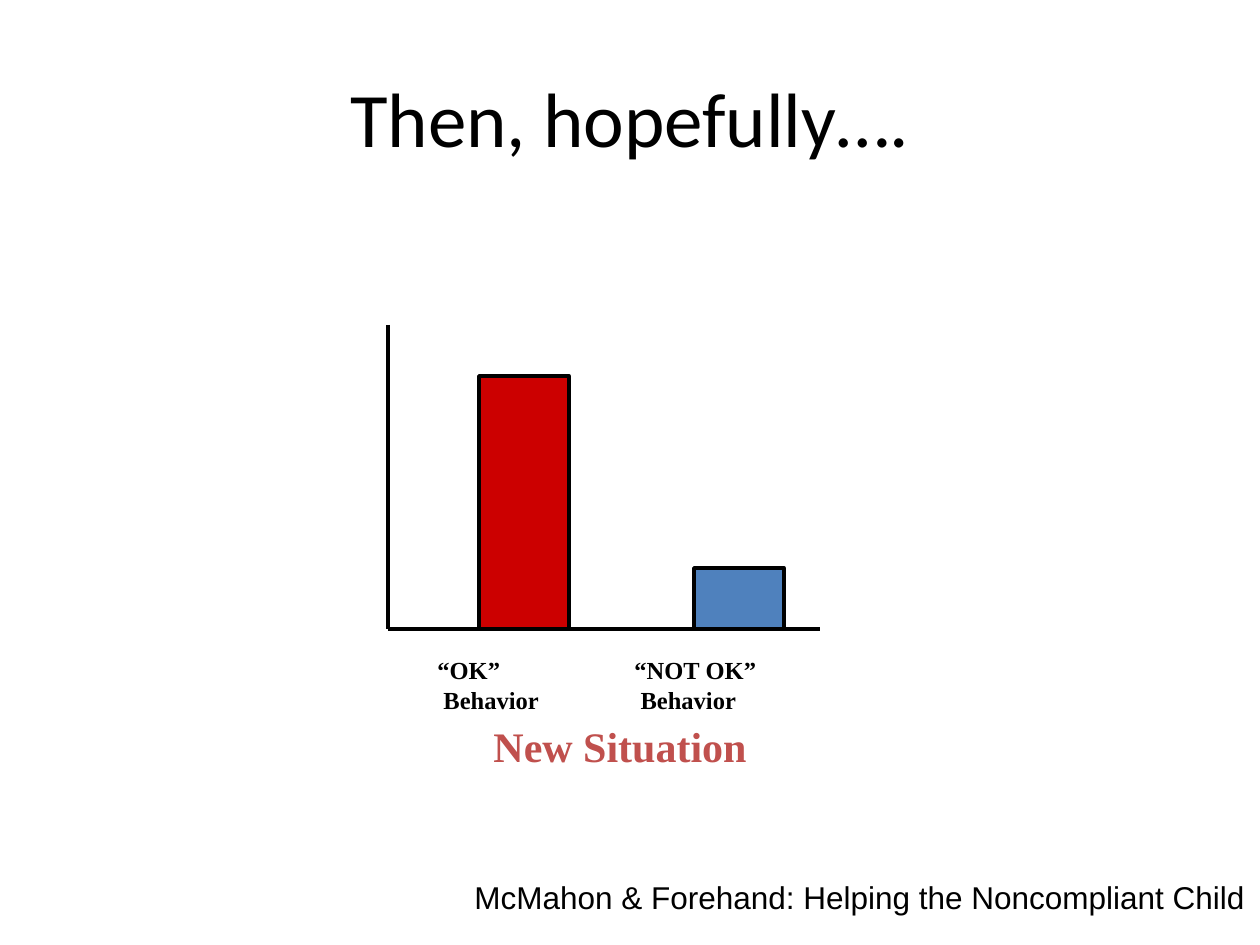
from lxml import etree
from pptx import Presentation
from pptx.dml.color import RGBColor
from pptx.enum.shapes import MSO_CONNECTOR as CONNECTOR, MSO_SHAPE as SHAPE
from pptx.enum.text import MSO_ANCHOR as ANCHOR, PP_ALIGN as ALIGN
from pptx.oxml.ns import qn
from pptx.util import Emu, Pt

PX_PER_INCH = 126
COLORS = {
    "text": "000000",
    "ok": "CC0000",
    "not_ok": "4F81BD",
    "situation": "C0504D",
}
SERIF = "Times New Roman"


def px(length):
    return Emu(round(length * 914400 / PX_PER_INCH))


def color(name):
    return RGBColor.from_string(COLORS[name])


def style(paragraph, font_name, size, color_name="text", bold=False, align=ALIGN.LEFT):
    paragraph.alignment = align
    font = paragraph.font
    font.name, font.size, font.bold = font_name, Pt(size), bold
    font.color.rgb = color(color_name)


def add_text(shapes, box, lines, *font, **options):
    frame = shapes.add_textbox(*map(px, box)).text_frame
    frame.word_wrap = True
    frame.text = "\n".join(lines)
    for paragraph in frame.paragraphs:
        style(paragraph, *font, **options)


def outline(shape):
    shape.line.color.rgb = color("text")
    shape.line.width = Pt(2)


def add_axis(shapes, *ends):
    axis = shapes.add_connector(CONNECTOR.STRAIGHT, *map(px, ends))
    outline(axis)
    etree.SubElement(axis._element.spPr, qn("a:effectLst"))


def add_title(slide, box, text):
    title = slide.shapes.title
    title.left, title.top, title.width, title.height = map(px, box)
    title.text_frame.text = text
    title.text_frame.vertical_anchor = ANCHOR.MIDDLE
    style(title.text_frame.paragraphs[0], "Calibri", 44, align=ALIGN.CENTER)


def add_behavior_diagram(slide, box):
    left, top, width, height = box
    base = top + height
    shapes = slide.shapes.add_group_shape().shapes

    # Axes
    add_axis(shapes, left, top, left, base)
    add_axis(shapes, left, base, left + width, base)

    # Bars with their labels: offsets are from the vertical axis
    bars = [
        ("“OK”", "ok", 91, 253, 37, 252),
        ("“NOT OK”", "not_ok", 306, 61, 234, 270),
    ]
    for name, fill, bar_x, bar_height, label_x, label_width in bars:
        bar = shapes.add_shape(
            SHAPE.RECTANGLE,
            *map(px, (left + bar_x, base - bar_height, 90, bar_height)))
        bar.shadow.inherit = False
        bar.fill.solid()
        bar.fill.fore_color.rgb = color(fill)
        outline(bar)
        add_text(shapes, (left + label_x, base + 20, label_width, 71),
                 [name, " Behavior"], SERIF, 14, bold=True)

    # Caption
    add_text(shapes, (left + 21, base + 85, 422, 63), ["New Situation"],
             SERIF, 24, "situation", bold=True, align=ALIGN.CENTER)


def main():
    presentation = Presentation()
    presentation.slide_width, presentation.slide_height = px(1260), px(945)
    slide = presentation.slides.add_slide(presentation.slide_layouts[5])

    add_title(slide, (63, 38, 1134, 157), "Then, hopefully….")
    add_behavior_diagram(slide, (388, 325, 432, 304))

    # Source line
    add_text(slide.shapes, (462, 872, 798, 50),
             ["McMahon & Forehand: Helping the Noncompliant Child"], "Arial", 18)

    presentation.save("out.pptx")


if __name__ == "__main__":
    main()
